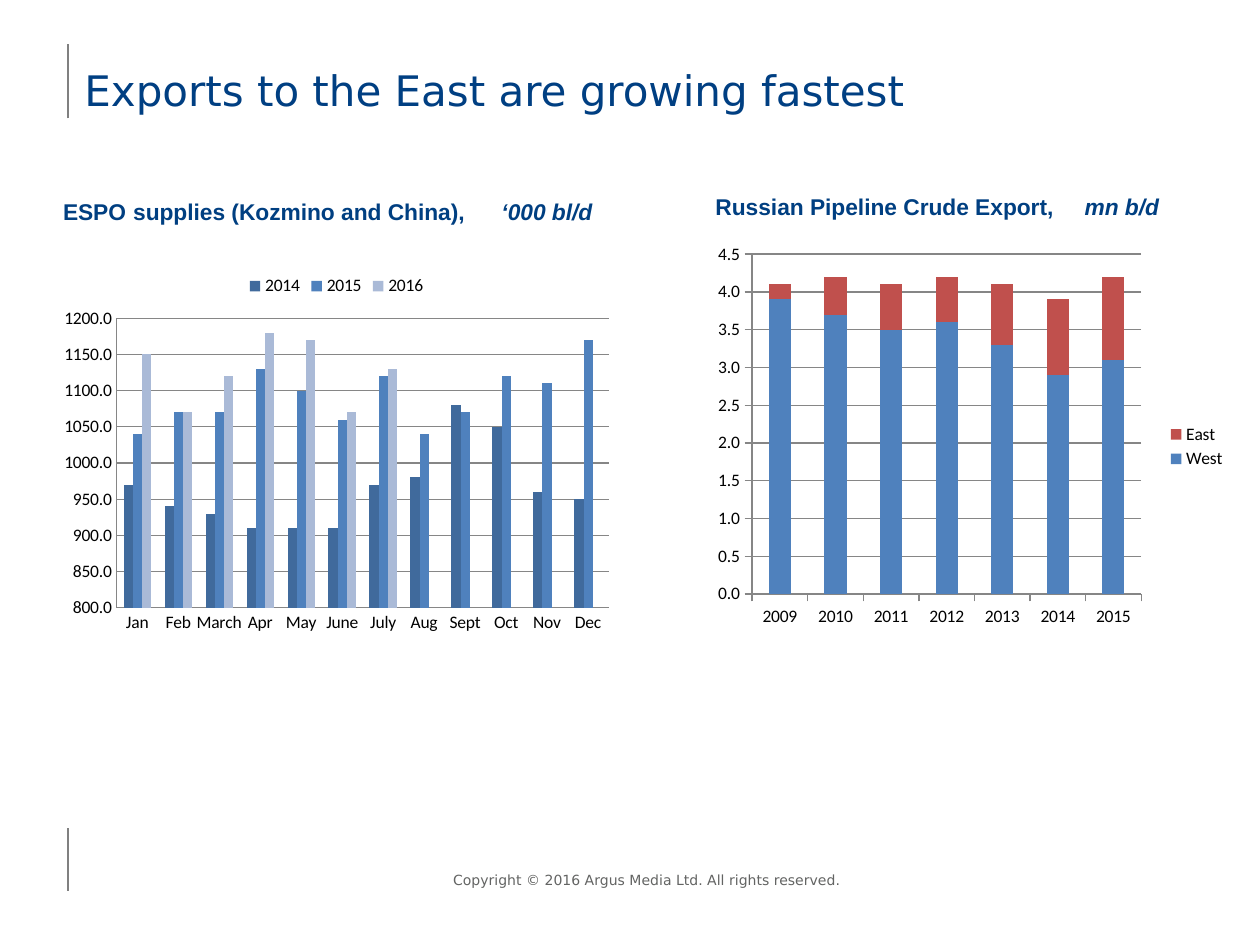
from dataclasses import dataclass
from typing import Optional

from lxml import etree
from pptx import Presentation
from pptx.chart.data import CategoryChartData
from pptx.dml.color import RGBColor
from pptx.enum.chart import XL_CHART_TYPE, XL_LEGEND_POSITION, XL_TICK_MARK
from pptx.enum.shapes import MSO_CONNECTOR
from pptx.enum.text import MSO_ANCHOR, MSO_AUTO_SIZE, PP_ALIGN
from pptx.oxml.ns import qn
from pptx.util import Inches, Pt

CLUSTERED, STACKED = XL_CHART_TYPE.COLUMN_CLUSTERED, XL_CHART_TYPE.COLUMN_STACKED
LEGEND_TOP, LEGEND_RIGHT = XL_LEGEND_POSITION.TOP, XL_LEGEND_POSITION.RIGHT
TICK_NONE, TICK_OUT = XL_TICK_MARK.NONE, XL_TICK_MARK.OUTSIDE
LEFT, CENTER = PP_ALIGN.LEFT, PP_ALIGN.CENTER
TOP, MIDDLE, BOTTOM = MSO_ANCHOR.TOP, MSO_ANCHOR.MIDDLE, MSO_ANCHOR.BOTTOM


@dataclass(frozen=True)
class Theme:
    title: str = "003F82"
    heading: str = "003F81"
    footer: str = "636463"
    text: str = "000000"
    rule: str = "808080"
    grid: str = "868686"
    dark_blue: str = "406A9C"
    blue: str = "4F81BD"
    pale_blue: str = "AABAD7"
    red: str = "C0504D"
    title_font: str = "DejaVu Sans"
    heading_font: str = "Arial"
    chart_font: str = "Calibri"
    title_size: int = 24
    space_size: int = 18
    heading_size: int = 13
    chart_size: int = 10
    footer_size: int = 8


THEME = Theme()


@dataclass(frozen=True)
class Area:
    left: float
    top: float
    width: float
    height: float

    def lengths(self) -> tuple:
        return tuple(Inches(v) for v in (self.left, self.top, self.width, self.height))


@dataclass(frozen=True)
class Span:
    text: str
    font: str
    size: int
    color: str
    bold: bool = False
    italic: bool = False


@dataclass(frozen=True)
class Series:
    name: str
    color: str
    values: tuple


@dataclass(frozen=True)
class ColumnChart:
    area: Area
    kind: XL_CHART_TYPE
    categories: tuple
    series: tuple
    legend: XL_LEGEND_POSITION
    tick: XL_TICK_MARK
    limits: Optional[tuple] = None
    plot: Optional[Area] = None  # inner plot, as fractions of the chart


def heading_span(text: str, italic: bool = False) -> Span:
    return Span(text, THEME.heading_font, THEME.heading_size, THEME.heading, True, italic)


def write_text(box, spans: list, *, align=LEFT, anchor=TOP, inset: Optional[float] = None,
               tab: Optional[float] = None, grow: bool = False) -> None:
    frame = box.text_frame
    frame.word_wrap = True
    frame.auto_size = MSO_AUTO_SIZE.SHAPE_TO_FIT_TEXT if grow else MSO_AUTO_SIZE.NONE
    frame.vertical_anchor = anchor
    if inset is not None:
        frame.margin_left = frame.margin_right = Inches(inset)
        frame.margin_top = frame.margin_bottom = Inches(inset)
    para = frame.paragraphs[0]
    para.alignment = align
    if tab is not None:
        stops = etree.SubElement(para._p.get_or_add_pPr(), qn("a:tabLst"))
        etree.SubElement(stops, qn("a:tab"), pos=str(Inches(tab)), algn="l")
    for span in spans:
        run = para.add_run()
        run.text = span.text
        font = run.font
        font.name, font.size = span.font, Pt(span.size)
        font.bold, font.italic = span.bold, span.italic
        font.color.rgb = RGBColor.from_string(span.color)


def add_rule(page, x: float, top: float, bottom: float) -> None:
    rule = page.shapes.add_connector(
        MSO_CONNECTOR.STRAIGHT, Inches(x), Inches(bottom), Inches(x), Inches(top))
    rule.line.color.rgb = RGBColor.from_string(THEME.rule)
    rule.line.width = Pt(0.75)
    etree.SubElement(rule._element.spPr, qn("a:effectLst"))


def place_plot(chart, plot: Area) -> None:
    plot_area = chart._chartSpace.chart.plotArea
    for old in plot_area.findall(qn("c:layout")):
        plot_area.remove(old)
    layout = etree.Element(qn("c:layout"))
    plot_area.insert(0, layout)
    manual = etree.SubElement(layout, qn("c:manualLayout"))
    settings = (("layoutTarget", "inner"), ("xMode", "edge"), ("yMode", "edge"),
                ("x", plot.left), ("y", plot.top), ("w", plot.width), ("h", plot.height))
    for tag, value in settings:
        etree.SubElement(manual, qn(f"c:{tag}"), val=str(value))


def add_column_chart(page, spec_chart: ColumnChart) -> None:
    data = CategoryChartData(number_format="0.0")
    data.categories = spec_chart.categories
    for series in spec_chart.series:
        data.add_series(series.name, series.values)
    chart = page.shapes.add_chart(spec_chart.kind, *spec_chart.area.lengths(), data).chart
    chart.has_title = False
    chart.font.name, chart.font.size = THEME.chart_font, Pt(THEME.chart_size)
    chart.font.color.rgb = RGBColor.from_string(THEME.text)
    chart.has_legend = True
    chart.legend.position = spec_chart.legend
    chart.legend.include_in_layout = False

    columns = chart.plots[0]
    columns.vary_by_categories = False
    columns.gap_width = 150
    columns.overlap = 100 if spec_chart.kind == STACKED else 0
    for drawn, series in zip(columns.series, spec_chart.series):
        drawn.format.fill.solid()
        drawn.format.fill.fore_color.rgb = RGBColor.from_string(series.color)

    values = chart.value_axis
    for axis in (chart.category_axis, values):
        axis.major_tick_mark = spec_chart.tick
        axis.minor_tick_mark = TICK_NONE
        axis.format.line.color.rgb = RGBColor.from_string(THEME.grid)
    values.tick_labels.number_format = "0.0"
    values.tick_labels.number_format_is_linked = False
    values.has_major_gridlines = True
    values.major_gridlines.format.line.color.rgb = RGBColor.from_string(THEME.grid)
    if spec_chart.limits:
        values.minimum_scale, values.maximum_scale = spec_chart.limits
    if spec_chart.plot:
        place_plot(chart, spec_chart.plot)


PIPELINE = ColumnChart(
    Area(5.54, 1.92, 4.29, 3.25), STACKED,
    tuple(str(year) for year in range(2009, 2016)),
    (Series("West", THEME.blue, (3.9, 3.7, 3.5, 3.6, 3.3, 2.9, 3.1)),
     Series("East", THEME.red, (0.2, 0.5, 0.6, 0.6, 0.8, 1, 1.1))),
    LEGEND_RIGHT, TICK_OUT, plot=Area(0.1, 0.03, 0.72, 0.83))

ESPO = ColumnChart(
    Area(0.42, 2.08, 4.5, 3), CLUSTERED,
    ("Jan", "Feb", "March", "Apr", "May", "June",
     "July", "Aug", "Sept", "Oct", "Nov", "Dec"),
    (Series("2014", THEME.dark_blue,
            (970, 940, 930, 910, 910, 910, 970, 980, 1080, 1050, 960, 950)),
     Series("2015", THEME.blue,
            (1040, 1070, 1070, 1130, 1100, 1060, 1120, 1040, 1070, 1120, 1110, 1170)),
     Series("2016", THEME.pale_blue,
            (1150, 1070, 1120, 1180, 1170, 1070, 1130) + (None,) * 5)),
    LEGEND_TOP, TICK_NONE, limits=(800, 1200))


def main() -> None:
    deck = Presentation()
    deck.slide_width, deck.slide_height = Inches(10), Inches(7.5)
    page = deck.slides.add_slide(deck.slide_layouts[5])

    # Title and margin rules
    title = page.shapes.title
    title.left, title.top, title.width, title.height = Area(0.67, 0.33, 8.91, 0.58).lengths()
    write_text(title, [Span("Exports to the East are growing fastest", THEME.title_font,
                            THEME.title_size, THEME.title)], anchor=BOTTOM, inset=0)
    add_rule(page, 0.54, 0.35, 0.94)
    add_rule(page, 0.54, 6.57, 7.07)

    # Charts
    add_column_chart(page, PIPELINE)
    add_column_chart(page, ESPO)

    # Chart headings, with the unit at a tab stop
    pipeline_heading = page.shapes.add_textbox(*Area(5.58, 1.48, 3.99, 0.32).lengths())
    write_text(pipeline_heading, [heading_span("Russian Pipeline Crude Export,\t"),
                                  heading_span("mn b/d", italic=True)], tab=2.93, grow=True)
    espo_heading = page.shapes.add_textbox(*Area(0.5, 1.5, 4.49, 0.42).lengths())
    write_text(espo_heading, [heading_span("ESPO"),
                              Span(" ", THEME.chart_font, THEME.space_size, THEME.text),
                              heading_span("supplies (Kozmino and China),\t"),
                              heading_span("‘000 bl/d", italic=True)], inset=0, tab=3.48)

    # Footer
    footer = page.shapes.add_textbox(*Area(3.35, 6.78, 3.57, 0.4).lengths())
    write_text(footer, [Span("Copyright © 2016 Argus Media Ltd. All rights reserved.",
                             THEME.title_font, THEME.footer_size, THEME.footer)],
               align=CENTER, anchor=MIDDLE)

    deck.save("out.pptx")


if __name__ == "__main__":
    main()
